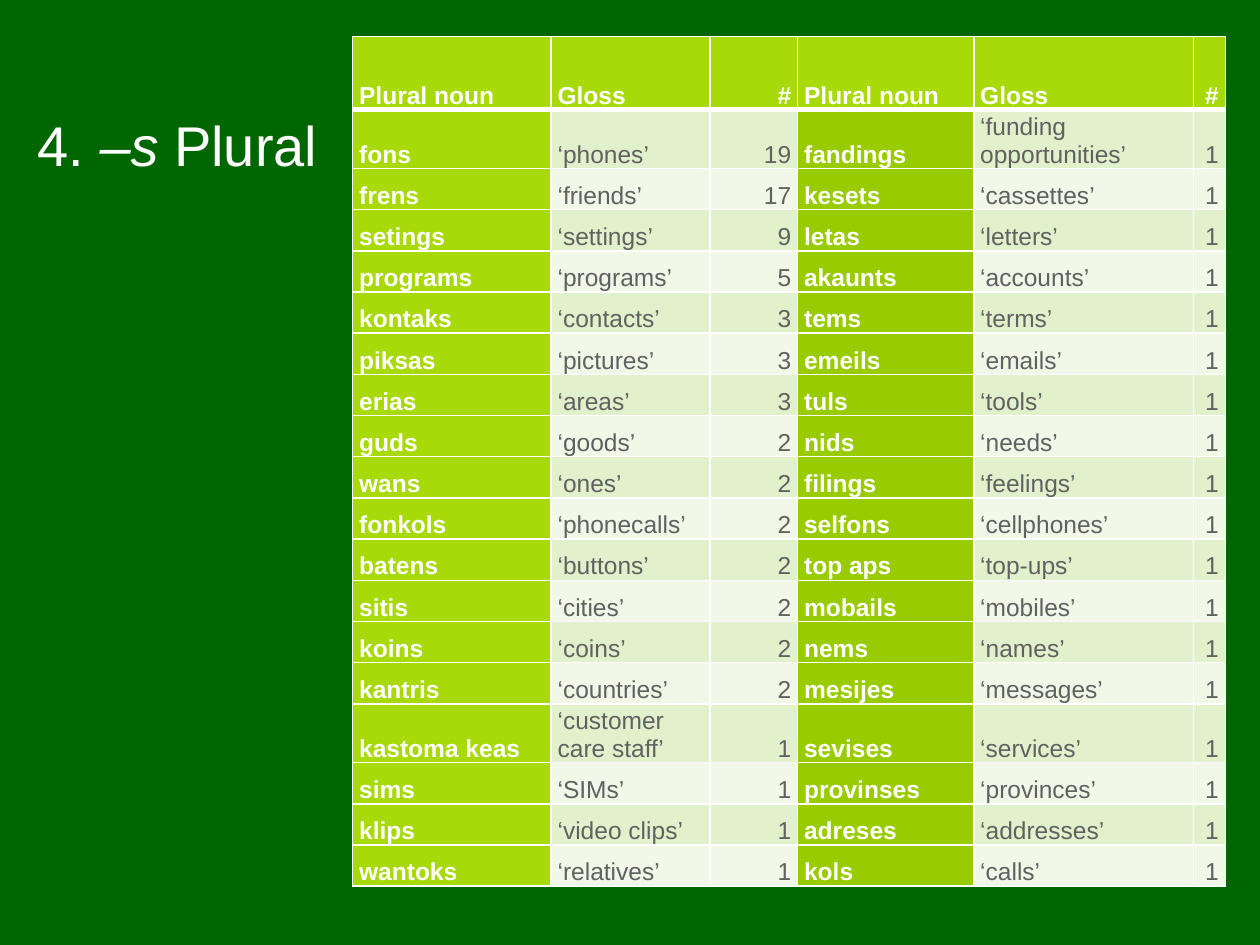
from lxml import etree
from pptx import Presentation
from pptx.dml.color import RGBColor
from pptx.enum.text import MSO_ANCHOR, PP_ALIGN
from pptx.oxml.ns import qn
from pptx.util import Cm, Pt

BOTTOM = MSO_ANCHOR.BOTTOM
LEFT, RIGHT = PP_ALIGN.LEFT, PP_ALIGN.RIGHT

FONT = "Arial"
COLORS = {
    "background": "006600",
    "white": "FFFFFF",
    "gloss": "616161",
    "lime": "A8DA09",
    "second noun": "99CC00",
    "odd row": "E1F1CC",
    "even row": "F1F8E7",
}

TITLE_RUNS = [("4. ", False), ("–s", True), (" Plural", False)]
HEADINGS = ("Plural noun", "Gloss", "#") * 2
PLURALS = [
    ("fons", "‘phones’", 19, "fandings", "‘funding opportunities’", 1),
    ("frens", "‘friends’", 17, "kesets", "‘cassettes’", 1),
    ("setings", "‘settings’", 9, "letas", "‘letters’", 1),
    ("programs", "‘programs’", 5, "akaunts", "‘accounts’", 1),
    ("kontaks", "‘contacts’", 3, "tems", "‘terms’", 1),
    ("piksas", "‘pictures’", 3, "emeils", "‘emails’", 1),
    ("erias", "‘areas’", 3, "tuls", "‘tools’", 1),
    ("guds", "‘goods’", 2, "nids", "‘needs’", 1),
    ("wans", "‘ones’", 2, "filings", "‘feelings’", 1),
    ("fonkols", "‘phonecalls’", 2, "selfons", "‘cellphones’", 1),
    ("batens", "‘buttons’", 2, "top aps", "‘top-ups’", 1),
    ("sitis", "‘cities’", 2, "mobails", "‘mobiles’", 1),
    ("koins", "‘coins’", 2, "nems", "‘names’", 1),
    ("kantris", "‘countries’", 2, "mesijes", "‘messages’", 1),
    ("kastoma keas", "‘customer care staff’", 1, "sevises", "‘services’", 1),
    ("sims", "‘SIMs’", 1, "provinses", "‘provinces’", 1),
    ("klips", "‘video clips’", 1, "adreses", "‘addresses’", 1),
    ("wantoks", "‘relatives’", 1, "kols", "‘calls’", 1),
]
COLUMN_WIDTHS = [4, 3.2, 1.77, 3.55, 4.43, 0.64]
HEADER_HEIGHT, ROW_HEIGHT, TALL_HEIGHT = 1.47, 0.83, 1
NOUN_COLUMNS, COUNT_COLUMNS = (0, 3), (2, 5)


def rgb(name):
    return RGBColor.from_string(COLORS[name])


def add_run(paragraph, text, size, color, bold=False, italic=False):
    run = paragraph.add_run()
    run.text = text
    run.font.name = FONT
    run.font.size = Pt(size)
    run.font.color.rgb = rgb(color)
    run.font.bold = bold
    run.font.italic = italic


def add_title(slide):
    title = slide.shapes.add_textbox(Cm(0.5), Cm(0.53), Cm(7.6), Cm(3.18))
    frame = title.text_frame
    frame.word_wrap = True
    frame.vertical_anchor = BOTTOM
    for text, italic in TITLE_RUNS:
        add_run(frame.paragraphs[0], text, 32, "white", italic=italic)


def add_borders(cell, top, bottom):
    properties = cell._tc.get_or_add_tcPr()
    for side, width in (("L", 1), ("R", 1), ("T", top), ("B", bottom)):
        line = etree.SubElement(properties, qn(f"a:ln{side}"), w=str(Pt(width)))
        fill = etree.SubElement(line, qn("a:solidFill"))
        etree.SubElement(fill, qn("a:srgbClr"), val=COLORS["white"])


def cell_fill(row, column):
    if row == 0 or column == 0:
        return "lime"
    if column in NOUN_COLUMNS:
        return "second noun"
    return "odd row" if row % 2 else "even row"


def fill_cell(cell, value, row, column):
    strong = row == 0 or column in NOUN_COLUMNS
    cell.margin_left = cell.margin_right = Cm(0.13)
    cell.margin_top = cell.margin_bottom = 0
    cell.vertical_anchor = BOTTOM
    add_borders(cell, top=3 if row == 1 else 1, bottom=3 if row == 0 else 1)
    cell.fill.solid()
    cell.fill.fore_color.rgb = rgb(cell_fill(row, column))
    paragraph = cell.text_frame.paragraphs[0]
    paragraph.alignment = RIGHT if column in COUNT_COLUMNS else LEFT
    add_run(paragraph, str(value), 14, "white" if strong else "gloss", bold=strong)


def add_plural_table(slide):
    entries = [HEADINGS, *PLURALS]
    heights = [HEADER_HEIGHT] + [
        TALL_HEIGHT if entry[0] == "kastoma keas" else ROW_HEIGHT for entry in PLURALS
    ]
    table = slide.shapes.add_table(
        len(entries), len(HEADINGS), Cm(7.11), Cm(0.74),
        Cm(sum(COLUMN_WIDTHS)), Cm(sum(heights)),
    ).table
    table.horz_banding = False
    for column, width in zip(table.columns, COLUMN_WIDTHS):
        column.width = Cm(width)
    for row, (entry, height) in enumerate(zip(entries, heights)):
        table.rows[row].height = Cm(height)
        for column, value in enumerate(entry):
            fill_cell(table.cell(row, column), value, row, column)


def main():
    presentation = Presentation()
    presentation.slide_width = Cm(25.4)
    presentation.slide_height = Cm(19.05)
    slide = presentation.slides.add_slide(presentation.slide_layouts[6])
    slide.background.fill.solid()
    slide.background.fill.fore_color.rgb = rgb("background")
    add_title(slide)
    add_plural_table(slide)
    presentation.save("out.pptx")


if __name__ == "__main__":
    main()
